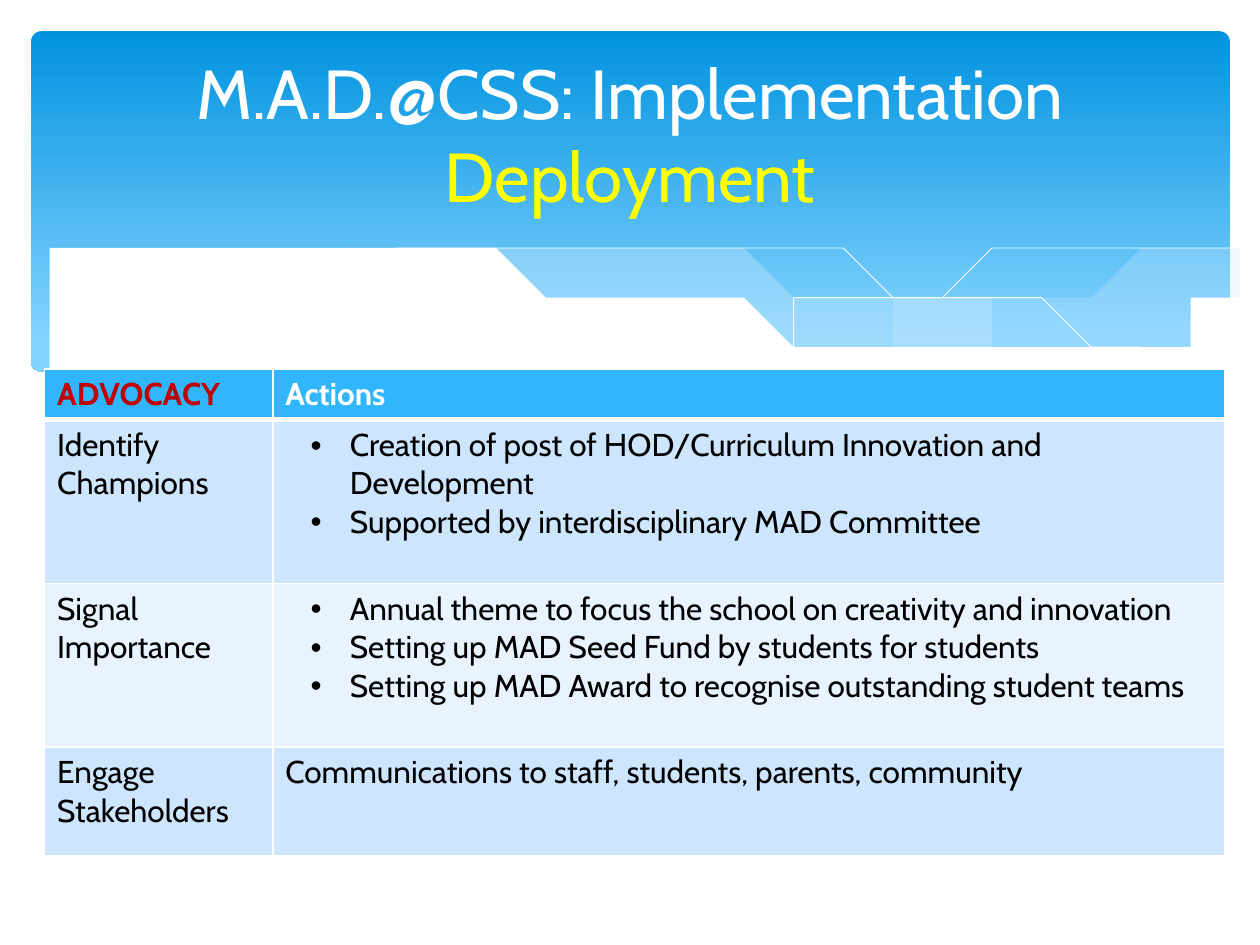
import pptx
import pptx.dml.color
import pptx.enum.dml
import pptx.enum.shapes
import pptx.enum.text
import pptx.oxml.ns
import pptx.util
from lxml import etree

Cm, Pt = pptx.util.Cm, pptx.util.Pt
RGB = pptx.dml.color.RGBColor.from_string
qn = pptx.oxml.ns.qn
ALIGN = pptx.enum.text.PP_ALIGN
FONT = "Cabin"
COLORS = {
    "white": "FFFFFF", "black": "000000", "yellow": "FFFF00", "red": "C00000",
    "deep": "0293E0", "sky": "83D3FE", "mist": "C6E7FC",
    "head": "31B6FD", "band": "CEE5FE", "pale": "E8F3FF",
}


def write(frame, text, color="black", size=18, bold=False, align=ALIGN.LEFT, bullet=False):
    """Add one paragraph to the frame, using its first one if still empty."""
    para = frame.paragraphs[0]
    if para.runs:
        para = frame.add_paragraph()
    para.alignment = align
    run = para.add_run()
    run.text = text
    run.font.name, run.font.size, run.font.bold = FONT, Pt(size), bold
    run.font.color.rgb = RGB(COLORS[color])
    if bullet:
        props = para._p.get_or_add_pPr()
        props.set("marL", str(Cm(1.3)))
        props.set("indent", str(-Cm(0.79)))
        etree.SubElement(props, qn("a:buFont"), typeface="Arial")
        etree.SubElement(props, qn("a:buChar"), char="•")


def smooth(knots, steps=5):
    """Points of a Catmull-Rom curve through the knots."""
    ends = [knots[0], *knots, knots[-1]]
    points = [knots[0]]
    for a, b, c, d in zip(ends, ends[1:], ends[2:], ends[3:]):
        for step in range(1, steps + 1):
            t = step / steps
            points.append(tuple(
                (2 * q + (r - p) * t + (2 * p - 5 * q + 4 * r - s) * t**2
                 + (3 * q - p - 3 * r + s) * t**3) / 2
                for p, q, r, s in zip(a, b, c, d)))
    return points


deck = pptx.Presentation()
deck.slide_width, deck.slide_height = Cm(25.4), Cm(19.05)
slide = deck.slides.add_slide(deck.slide_layouts[6])
shapes = slide.shapes

# Blue banner
banner = shapes.add_shape(pptx.enum.shapes.MSO_SHAPE.ROUNDED_RECTANGLE,
                          Cm(0.63), Cm(0.63), Cm(24.16), Cm(6.86))
banner.adjustments[0] = 0.03
banner.shadow.inherit = False
banner.line.fill.background()
banner.fill.gradient()
banner.fill.gradient_angle = 270
for stop, color, place in zip(banner.fill.gradient_stops, ("deep", "sky"), (0, 0.9)):
    stop.color.rgb = RGB(COLORS[color])
    stop.position = place

# Waves: smooth edges in cm, straight corners, fill, opacity in percent
WAVES = [
    ([[(24.79, 5.08), (23.75, 5.26), (21.87, 5.66), (19.79, 6.17), (17.93, 6.53), (16.79, 6.73)],
      [(16.79, 6.73), (18.24, 6.93), (20.4, 7.06), (22.38, 6.93), (23.75, 6.65), (24.79, 6.27)]],
     [], "mist", 29),
    ([[(22.68, 6.93), (20.5, 6.6), (17.93, 6.1), (15.19, 5.44), (13.06, 5.03),
       (11.2, 4.8), (9.17, 4.72), (7.26, 4.85)],
      [(7.26, 4.85), (9.19, 5.16), (11.4, 5.64), (14.38, 6.3), (16.89, 6.76),
       (19, 7.01), (20.78, 7.09), (22.68, 6.93)]],
     [], "mist", 40),
    ([[(7.85, 4.95), (9.22, 4.8), (11, 4.75), (12.95, 4.88), (15.44, 5.18),
       (17.65, 5.56), (20.19, 6.15), (23.04, 6.91)]], [], None, 100),
    ([[(15.57, 6.53), (17.65, 5.97), (20.47, 5.33), (22.73, 4.93), (24.77, 4.7)]],
     [], None, 100),
    ([[(0.58, 5.41), (1.5, 5.05), (2.69, 4.8), (4.5, 4.67), (6.88, 4.78), (9.27, 5.13),
       (12.07, 5.77), (14.71, 6.35), (16.97, 6.73), (18.9, 6.96), (20.55, 7.04),
       (22.23, 6.93), (23.62, 6.65), (24.82, 6.25)]],
     [(24.82, 8.36), (0.58, 8.36)], "white", 100),
]
for edges, corners, color, alpha in WAVES:
    points = [point for edge in edges for point in smooth(edge)] + corners
    pen = shapes.build_freeform(*points[0], scale=Cm(1))
    pen.add_line_segments(points[1:], close=color is not None)
    wave = pen.convert_to_shape()
    wave.shadow.inherit = False
    if color is None:
        wave.fill.background()
        wave.line.color.rgb = RGB(COLORS["white"])
        wave.line.width = Pt(0.5)
        continue
    wave.line.fill.background()
    wave.fill.solid()
    wave.fill.fore_color.rgb = RGB(COLORS[color])
    if alpha < 100:
        tint = wave._element.spPr.find(qn("a:solidFill"))[0]
        etree.SubElement(tint, qn("a:alpha"), val=str(alpha * 1000))

# Title
title = shapes.add_textbox(Cm(1.27), Cm(0.94), Cm(22.86), Cm(3.48)).text_frame
title.word_wrap = True
title.vertical_anchor = pptx.enum.text.MSO_ANCHOR.MIDDLE
for text, color in (("M.A.D.@CSS: Implementation", "white"), ("Deployment", "yellow")):
    write(title, text, color=color, size=39.6, align=ALIGN.CENTER)

# Table of actions
ROWS = [
    ("ADVOCACY", ["Actions"], "head", 1.02),
    ("Identify Champions",
     ["Creation of post of HOD/Curriculum Innovation and Development",
      "Supported by interdisciplinary MAD Committee"], "band", 3.3),
    ("Signal Importance",
     ["Annual theme to focus the school on creativity and innovation",
      "Setting up MAD Seed Fund by students for students",
      "Setting up MAD Award to recognise outstanding student teams"], "pale", 3.3),
    ("Engage Stakeholders",
     ["Communications to staff, students, parents, community"], "band", 2.2),
]
table = shapes.add_table(len(ROWS), 2, Cm(0.9), Cm(7.44), Cm(23.8), Cm(9.82)).table
table.columns[0].width, table.columns[1].width = Cm(4.6), Cm(19.2)
for row, (topic, actions, fill, height) in enumerate(ROWS):
    table.rows[row].height = Cm(height)
    for col, lines in enumerate(([topic], actions)):
        cell = table.cell(row, col)
        props = cell._tc.get_or_add_tcPr()
        for side in "LRTB":
            thick = (row, side) in ((0, "B"), (1, "T"))
            edge = etree.SubElement(props, qn("a:ln" + side), w=str(Pt(3 if thick else 1)))
            paint = etree.SubElement(edge, qn("a:solidFill"))
            etree.SubElement(paint, qn("a:srgbClr"), val=COLORS["white"])
        cell.fill.solid()
        cell.fill.fore_color.rgb = RGB(COLORS[fill])
        color = ("red", "white")[col] if row == 0 else "black"
        for line in lines:
            write(cell.text_frame, line, color=color, bold=row == 0, bullet=len(lines) > 1)

deck.save("out.pptx")
